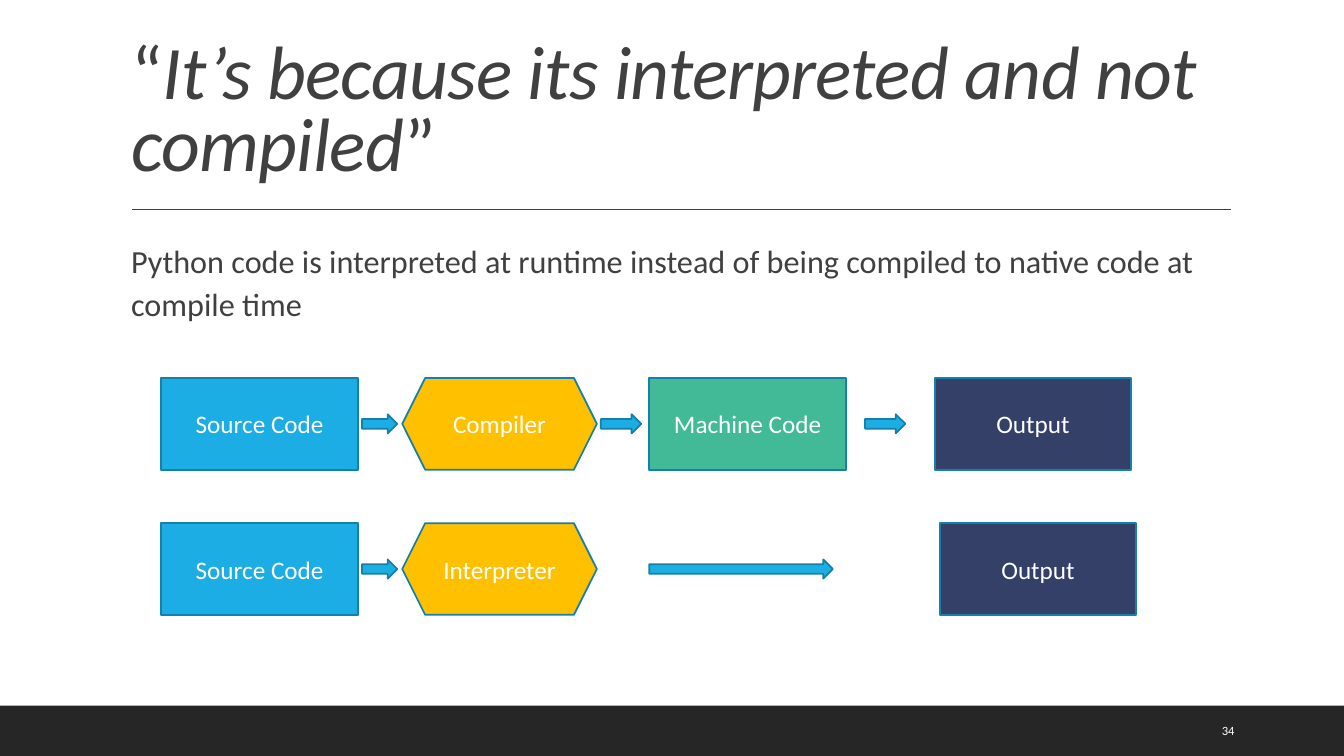
from lxml.etree import SubElement
from pptx import Presentation
from pptx.dml.color import RGBColor
from pptx.enum.shapes import MSO_CONNECTOR, MSO_SHAPE
from pptx.enum.text import MSO_ANCHOR as ANCHOR, MSO_AUTO_SIZE, PP_ALIGN as ALIGN
from pptx.oxml.ns import qn
from pptx.util import Pt

PX = 9144
FONT = "Calibri"
INK, WHITE, FOOTER = "404040", "FFFFFF", "262626"
BLUE, AMBER, GREEN, NAVY, OUTLINE = "1CADE4", "FFC000", "42BA97", "344068", "1580A9"
BOX, HEXAGON, ARROW = MSO_SHAPE.RECTANGLE, MSO_SHAPE.HEXAGON, MSO_SHAPE.RIGHT_ARROW
BLOCK_HEIGHT, ARROW_HEIGHT = 91, 19


def emu(*lengths):
    """Turn px lengths into EMU."""
    return [length * PX for length in lengths]


def color(value):
    """Turn a hex string into a colour."""
    return RGBColor.from_string(value)


def style_font(font, size, value):
    """Set the typeface, size and colour of a font."""
    font.name, font.size = FONT, Pt(size)
    font.color.rgb = color(value)


def place(shape, box):
    """Move a shape to a box given in px."""
    shape.left, shape.top, shape.width, shape.height = emu(*box)


def add_block(slide, kind, box, fill, line=OUTLINE, text=""):
    """Add a filled shape with an optional centred label."""
    shape = slide.shapes.add_shape(kind, *emu(*box))
    shape.shadow.inherit = False
    shape.fill.solid()
    shape.fill.fore_color.rgb = color(fill)
    if line:
        shape.line.color.rgb = color(line)
        shape.line.width = Pt(1.25)
    else:
        shape.line.fill.background()
    if text:
        frame = shape.text_frame
        frame.text = text
        frame.vertical_anchor = ANCHOR.MIDDLE
        paragraph = frame.paragraphs[0]
        paragraph.alignment = ALIGN.CENTER
        style_font(paragraph.runs[0].font, 18, WHITE)


def add_title(slide, box):
    """Fill the title placeholder and rule a line beneath it."""
    title = slide.shapes.title
    place(title, box)
    frame = title.text_frame
    frame.auto_size = MSO_AUTO_SIZE.NONE
    frame.word_wrap = True
    frame.vertical_anchor = ANCHOR.BOTTOM
    paragraph = frame.paragraphs[0]
    paragraph.alignment = ALIGN.LEFT
    paragraph.line_spacing = 0.8
    quote = ("“", "It’s because its interpreted and not compiled", "”")
    for index, text in enumerate(quote):
        run = paragraph.add_run()
        run.text = text
        style_font(run.font, 54, INK)
        run.font.italic = index == 1
        run.font._element.set("spc", "-50")

    left, top, width, height = box
    rule_y = top + height + 18
    rule = slide.shapes.add_connector(
        MSO_CONNECTOR.STRAIGHT, *emu(left + 11, rule_y, left + width + 1, rule_y))
    rule.line.color.rgb = color(INK)
    rule.line.width = Pt(1)
    SubElement(rule._element.spPr, qn("a:effectLst"))


def add_body(slide, box):
    """Fill the body placeholder with the explanation."""
    body = slide.placeholders[1]
    place(body, box)
    frame = body.text_frame
    frame.auto_size = MSO_AUTO_SIZE.NONE
    frame.word_wrap = True
    frame.margin_left = frame.margin_right = 0
    frame.text = ("Python code is interpreted at runtime instead of being compiled "
                  "to native code at compile time")
    paragraph = frame.paragraphs[0]
    paragraph.alignment = ALIGN.LEFT
    paragraph.line_spacing = 1.1
    paragraph.space_before, paragraph.space_after = Pt(0), Pt(2)
    properties = paragraph._p.get_or_add_pPr()
    properties.set("marL", str(10 * PX))
    properties.set("indent", str(-10 * PX))
    SubElement(properties, qn("a:buChar")).set("char", " ")
    style_font(paragraph.runs[0].font, 23, INK)


def add_flow(slide, left, top, blocks, arrows):
    """Add a row of labelled blocks with arrows centred on its height."""
    for kind, offset, width, fill, text in blocks:
        add_block(slide, kind, (left + offset, top, width, BLOCK_HEIGHT), fill, text=text)
    arrow_top = top + (BLOCK_HEIGHT - ARROW_HEIGHT) // 2
    for offset, width in arrows:
        add_block(slide, ARROW, (left + offset, arrow_top, width, ARROW_HEIGHT), BLUE)


def add_footer(slide, box):
    """Add the dark footer band with the slide number."""
    left, top, width, height = box
    add_block(slide, BOX, box, FOOTER, line=None)
    number = slide.shapes.add_textbox(*emu(left + 1202, top + 5, 85, 40))
    frame = number.text_frame
    frame.word_wrap = True
    frame.vertical_anchor = ANCHOR.MIDDLE
    frame.text = "34"
    style_font(frame.paragraphs[0].runs[0].font, 9, WHITE)


def main():
    """Build the slide and save it."""
    presentation = Presentation()
    presentation.slide_width, presentation.slide_height = emu(1333, 750)
    slide = presentation.slides.add_slide(presentation.slide_layouts[1])
    add_footer(slide, (0, 700, 1333, 50))
    add_title(slide, (120, 31, 1100, 159))
    add_body(slide, (120, 231, 1100, 411))
    source = (BOX, 0, 195, BLUE, "Source Code")
    add_flow(slide, 160, 375,
             [source,
              (HEXAGON, 239, 193, AMBER, "Compiler"),
              (BOX, 484, 195, GREEN, "Machine Code"),
              (BOX, 767, 195, NAVY, "Output")],
             [(199, 35), (436, 40), (698, 40)])
    add_flow(slide, 160, 519,
             [source,
              (HEXAGON, 239, 193, AMBER, "Interpreter"),
              (BOX, 772, 195, NAVY, "Output")],
             [(199, 35), (484, 182)])
    presentation.save("out.pptx")


if __name__ == "__main__":
    main()
